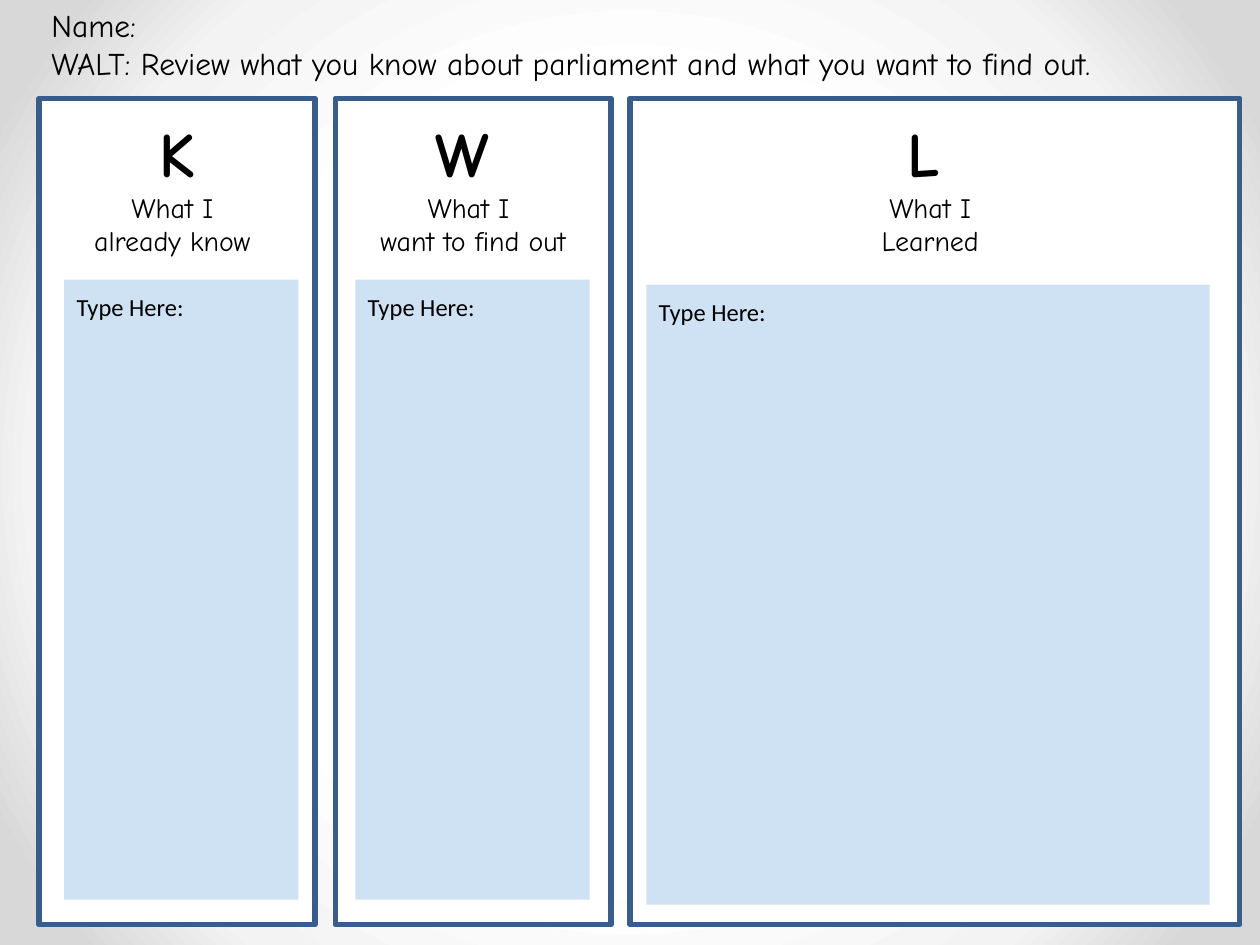
from lxml import etree
from pptx import Presentation
from pptx import util as u
from pptx.dml.color import RGBColor
from pptx.enum import shapes, text
from pptx.oxml import ns

BLACK = RGBColor(0x00, 0x00, 0x00)
WHITE = RGBColor(0xFF, 0xFF, 0xFF)
BORDER = RGBColor(0x38, 0x5D, 0x8A)
ANSWER = RGBColor(0xCF, 0xE2, 0xF3)
BACKDROP = [(0, "FFFFFF"), (50, "FFFFFF"), (76, "F3F3F3"), (92, "D8D8D8"), (100, "D8D8D8")]
HEADING_FONT, BODY_FONT = "Comic Neue", "Calibri"

INTRO = ["Name:", "WALT: Review what you know about parliament and what you want to find out."]
PROMPT = "Type Here:"
PANEL_TOP, PANEL_HEIGHT = 0.78, 6.56
HEADING_TOP, HEADING_HEIGHT = 0.86, 1.25
ANSWER_HEIGHT = 4.92
COLUMNS = [
    {"left": 0.31, "width": 2.19, "answer": (0.51, 2.22, 1.86),
     "lines": ["K", "What I ", "already know "]},
    {"left": 2.66, "width": 2.19, "answer": (2.82, 2.22, 1.86),
     "lines": ["W ", "What I ", "want to find out"]},
    {"left": 5, "width": 4.84, "answer": (5.13, 2.26, 4.47),
     "lines": ["L ", "What I ", "Learned "]},
]


def set_backdrop(s):
    fill = s.background.fill
    fill.gradient()
    grad = s.element.find(".//" + ns.qn("a:gradFill"))
    for child in list(grad):
        grad.remove(child)
    stops = etree.SubElement(grad, ns.qn("a:gsLst"))
    for pos, color in BACKDROP:
        stop = etree.SubElement(stops, ns.qn("a:gs"), pos=str(pos * 1000))
        etree.SubElement(stop, ns.qn("a:srgbClr"), val=color)
    radial = etree.SubElement(grad, ns.qn("a:path"), path="circle")
    etree.SubElement(radial, ns.qn("a:fillToRect"),
                     {side: "50000" for side in "ltrb"})


def write(sp, lines, sizes, font, align=text.PP_ALIGN.LEFT, bold_first=False, inset=0.05):
    tf = sp.text_frame
    tf.word_wrap = True
    tf.vertical_anchor = text.MSO_ANCHOR.TOP
    tf.margin_left = tf.margin_right = u.Inches(0.1)
    tf.margin_top = tf.margin_bottom = u.Inches(inset)
    for i, (line, size) in enumerate(zip(lines, sizes)):
        p = tf.paragraphs[0] if i == 0 else tf.add_paragraph()
        p.text = line
        p.alignment = align
        p.font.name = font
        p.font.size = u.Pt(size)
        p.font.bold = bold_first and i == 0
        p.font.color.rgb = BLACK


def add_text(s, box, *args, **kwargs):
    write(s.shapes.add_textbox(*map(u.Inches, box)), *args, **kwargs)


def add_rect(s, box, color, border=None):
    sp = s.shapes.add_shape(shapes.MSO_SHAPE.RECTANGLE, *map(u.Inches, box))
    sp.shadow.inherit = False
    sp.fill.solid()
    sp.fill.fore_color.rgb = color
    if border is None:
        sp.line.fill.background()
    else:
        sp.line.color.rgb = border
        sp.line.width = u.Pt(3)
    return sp


def main():
    prs = Presentation()
    prs.slide_width, prs.slide_height = u.Inches(10), u.Inches(7.5)
    s = prs.slides.add_slide(prs.slide_layouts[6])
    set_backdrop(s)
    add_text(s, (0.31, 0, 9.45, 0.71), INTRO, (18, 18), HEADING_FONT)
    for column in COLUMNS:
        left, width = column["left"], column["width"]
        add_rect(s, (left, PANEL_TOP, width, PANEL_HEIGHT), WHITE, BORDER)
        add_text(s, (left, HEADING_TOP, width, HEADING_HEIGHT), column["lines"],
                 (36, 16, 16), HEADING_FONT, text.PP_ALIGN.CENTER, bold_first=True)
        sp = add_rect(s, (*column["answer"], ANSWER_HEIGHT), ANSWER)
        write(sp, [PROMPT], [14], BODY_FONT, inset=0.1)
    prs.save("out.pptx")


if __name__ == "__main__":
    main()
